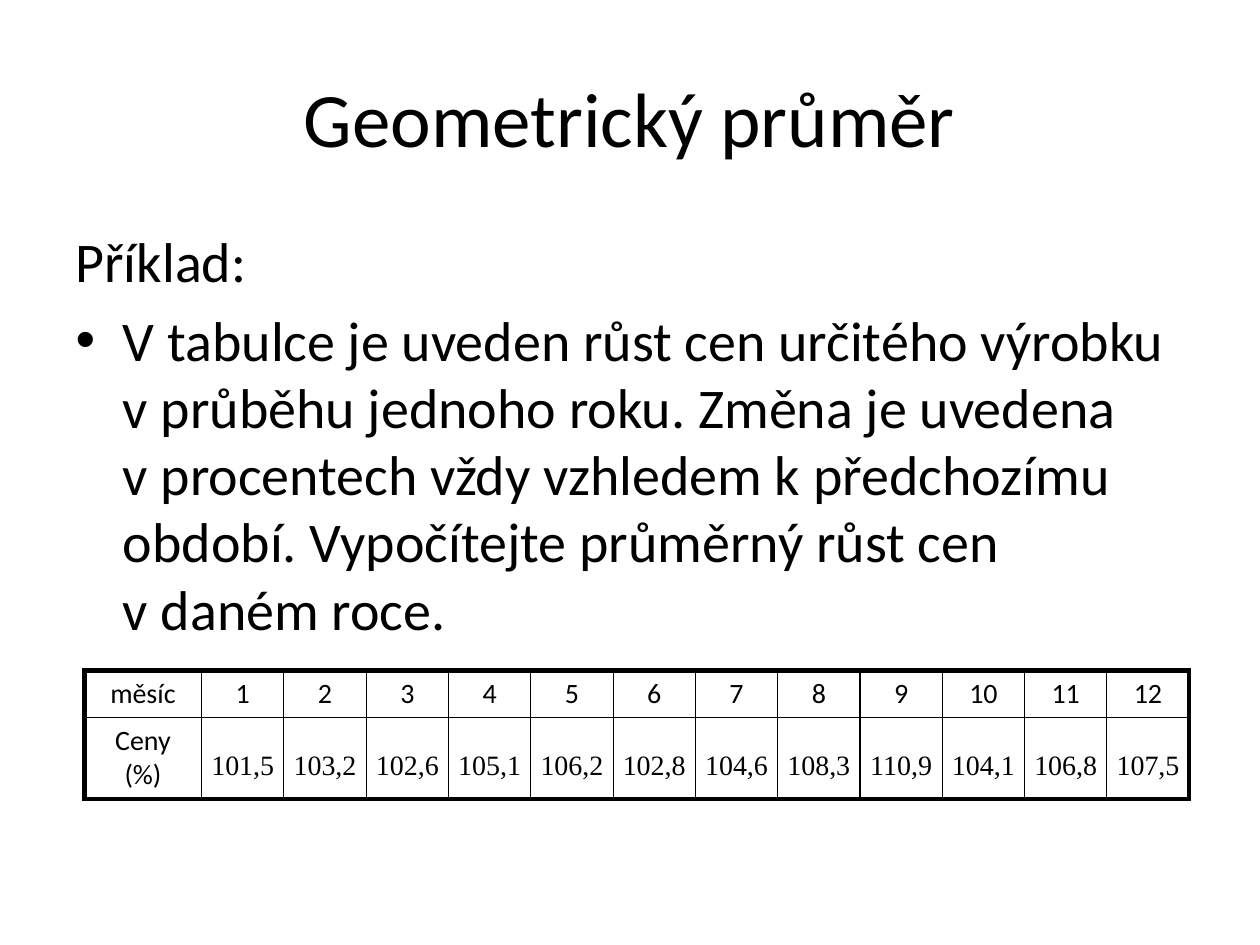
from lxml import etree
from pptx import Presentation
from pptx.dml.color import RGBColor
from pptx.enum.text import MSO_ANCHOR, PP_ALIGN
from pptx.oxml.ns import qn
from pptx.util import Inches, Pt

CENTER, MIDDLE = PP_ALIGN.CENTER, MSO_ANCHOR.MIDDLE

# Content ("~" stands for a no-break space)
TITLE = "Geometrický průměr"
BODY = [
    "Příklad:",
    "V~tabulce je uveden růst cen určitého výrobku v~průběhu jednoho roku. "
    "Změna je uvedena v~procentech vždy vzhledem k~předchozímu období. "
    "Vypočítejte průměrný růst cen v~daném roce.",
]
ROWS = [
    ["měsíc"] + [str(n) for n in range(1, 13)],
    ["Ceny (%)", "101,5", "103,2", "102,6", "105,1", "106,2", "102,8",
     "104,6", "108,3", "110,9", "104,1", "106,8", "107,5"],
]

# Layout in inches, line widths in points
WIDE, HIGH = 10, 7.5
EDGE = WIDE * 0.05
LEFT, TOP, SPAN, HEAD = 0.67, 5.32, 8.77, 0.93
TALL = [0.37, 0.65]
THICK, THIN = 3, 0.75
INK, PAPER = "000000", "FFFFFF"


def color(code):
    return RGBColor.from_string(code)


def place(shape, *box):
    for name, size in zip(("left", "top", "width", "height"), box):
        setattr(shape, name, Inches(size))


def style(para, size, face="Calibri"):
    for name, value in {"size": Pt(size), "name": face}.items():
        setattr(para.font, name, value)
    para.font.color.rgb = color(INK)


def border(cell, side, width):
    line = etree.SubElement(cell._tc.get_or_add_tcPr(), qn("a:ln" + side),
                            w=str(Pt(width)))
    fill = etree.SubElement(line, qn("a:solidFill"))
    etree.SubElement(fill, qn("a:srgbClr"), val=INK)


deck = Presentation()
deck.slide_width, deck.slide_height = Inches(WIDE), Inches(HIGH)
slide = deck.slides.add_slide(deck.slide_layouts[1])
slide.background.fill.solid()
slide.background.fill.fore_color.rgb = color(PAPER)
title, body = slide.placeholders

# Title
place(title, EDGE, 0.3, WIDE - 2 * EDGE, 1.25)
title.text_frame.text = TITLE
style(title.text_frame.paragraphs[0], 44)

# Body: a plain lead line, then a bullet
place(body, EDGE, 1.75, WIDE - 2 * EDGE, 4.95)
body.text_frame.text = "\n".join(BODY).replace("~", chr(160))
for para in body.text_frame.paragraphs:
    style(para, 32)
lead = body.text_frame.paragraphs[0]._p.get_or_add_pPr()
etree.SubElement(lead, qn("a:buNone"))

# Table: a label column, then equal months
last, end = len(ROWS) - 1, len(ROWS[0]) - 1
frame = slide.shapes.add_table(last + 1, end + 1, Inches(LEFT), Inches(TOP),
                               Inches(SPAN), Inches(sum(TALL)))
table = frame.table
table.first_row = table.horz_banding = False
for c, col in enumerate(table.columns):
    col.width = Inches((SPAN - HEAD) / end if c else HEAD)
for r, texts in enumerate(ROWS):
    table.rows[r].height = Inches(TALL[r])
    for c, text in enumerate(texts):
        cell = table.cell(r, c)
        cell.text = text
        cell.vertical_anchor = MIDDLE
        para = cell.text_frame.paragraphs[0]
        para.alignment = CENTER
        value = r and c
        style(para, 16, "Times New Roman" if value else "Calibri")
        if value:
            para.line_spacing = 1.5
            cell.margin_left = cell.margin_right = Inches(0.07)
            cell.margin_top = cell.margin_bottom = 0
        outer = {"L": c == 0, "R": c == end, "T": r == 0, "B": r == last}
        for side, rim in outer.items():
            border(cell, side, THICK if rim else THIN)
        cell.fill.background()

deck.save("out.pptx")
